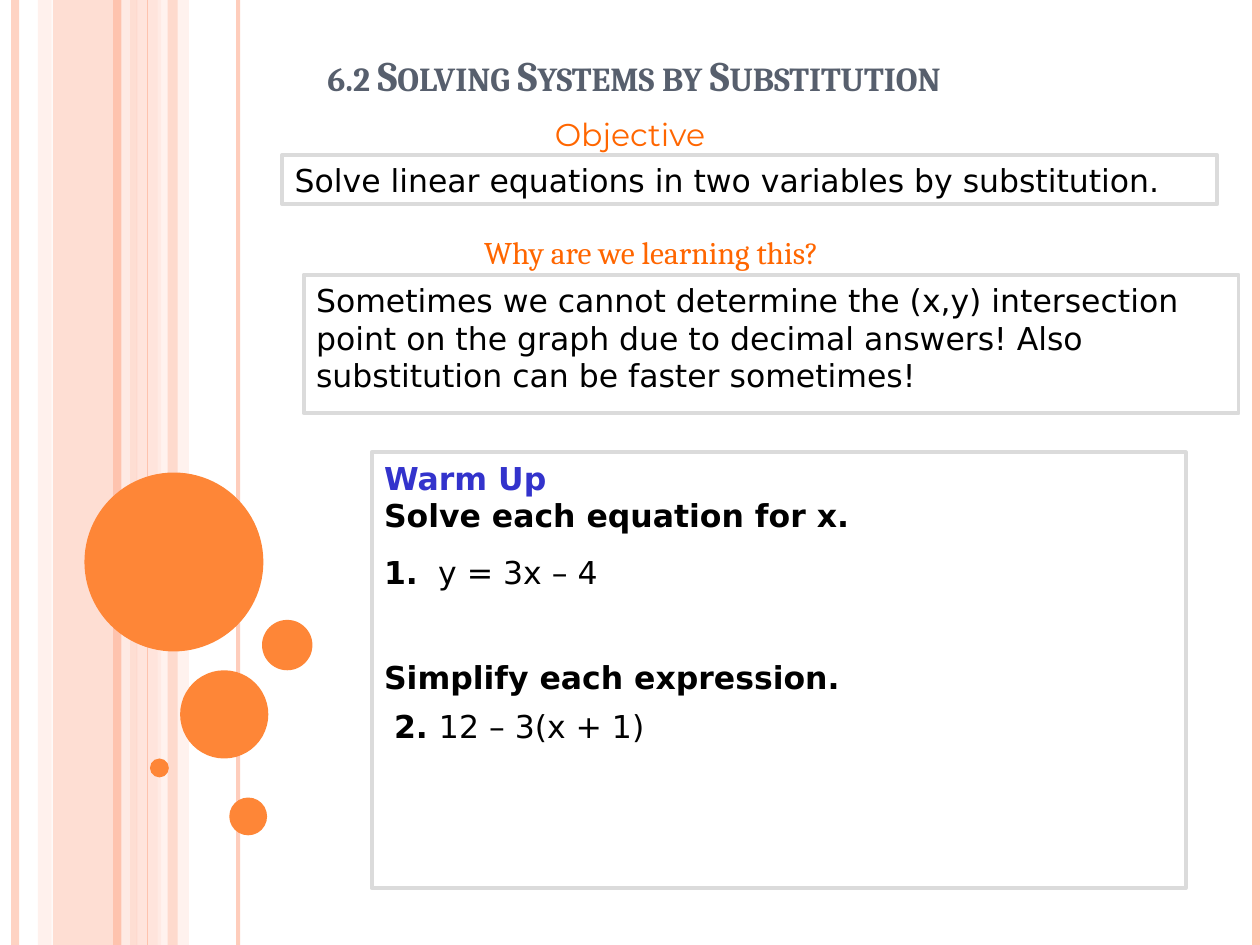
from lxml.etree import SubElement
from pptx import Presentation
from pptx.dml.color import RGBColor
from pptx.enum.shapes import MSO_CONNECTOR, MSO_SHAPE
from pptx.enum.text import MSO_ANCHOR, PP_ALIGN
from pptx.oxml.ns import qn
from pptx.util import Inches, Pt

COLORS = {
    "peach": "FEC3AE", "blush": "FFD9CE", "cream": "FFEDE8",
    "orange": "FE8637", "heading": "FF6600", "title": "575F6D",
    "frame": "DBDBDB", "black": "000000", "blue": "3333CC",
}
BODY_FONT = "DejaVu Sans"


class SlideBuilder:
    def __init__(self, page, height):
        self.page = page
        self.height = height

    def paint(self, color_format, color, opacity=100):
        color_format.rgb = RGBColor.from_string(COLORS[color])
        if opacity < 100:
            element = color_format._xFill.find(qn("a:srgbClr"))
            SubElement(element, qn("a:alpha"), val=str(opacity * 1000))

    def filled(self, kind, left, top, width, height, color, opacity=100):
        shape = self.page.shapes.add_shape(
            kind, Inches(left), Inches(top), Inches(width), Inches(height))
        shape.shadow.inherit = False
        shape.fill.solid()
        element = shape.fill._xPr.find(qn("a:solidFill"))
        shape.fill.fore_color.rgb = RGBColor.from_string(COLORS[color])
        if opacity < 100:
            SubElement(element[0], qn("a:alpha"), val=str(opacity * 1000))
        shape.line.fill.background()

    def band(self, left, width, color, opacity):
        self.filled(MSO_SHAPE.RECTANGLE, left, 0, width, self.height, color, opacity)

    def bubble(self, left, top, size):
        self.filled(MSO_SHAPE.OVAL, left, top, size, size, "orange")

    def stripe(self, x, color, weight, opacity):
        line = self.page.shapes.add_connector(
            MSO_CONNECTOR.STRAIGHT, Inches(x), 0, Inches(x), Inches(self.height))
        line.line.width = Pt(weight)
        line.line.color.rgb = RGBColor.from_string(COLORS[color])
        properties = line._element.spPr
        if opacity < 100:
            element = properties.find(".//" + qn("a:srgbClr"))
            SubElement(element, qn("a:alpha"), val=str(opacity * 1000))
        SubElement(properties, qn("a:effectLst"))

    def style(self, span, color="black", bold=False, font=BODY_FONT, size=18):
        span.font.name = font
        span.font.size = Pt(size)
        span.font.bold = bold
        span.font.color.rgb = RGBColor.from_string(COLORS[color])

    def text(self, left, top, width, height, anchor=MSO_ANCHOR.TOP):
        box = self.page.shapes.add_textbox(
            Inches(left), Inches(top), Inches(width), Inches(height))
        box.text_frame.word_wrap = True
        box.text_frame.vertical_anchor = anchor
        return box

    def framed(self, left, top, width, height):
        box = self.text(left, top, width, height)
        box.line.color.rgb = RGBColor.from_string(COLORS["frame"])
        box.line.width = Pt(2.25)
        return box

    def statement(self, left, top, width, height, wording):
        box = self.framed(left, top, width, height)
        box.text_frame.text = wording
        self.style(box.text_frame.paragraphs[0].runs[0])

    def heading(self, left, top, wording, font):
        box = self.text(left, top, 10, 0.44, MSO_ANCHOR.MIDDLE)
        box.text_frame.text = wording
        para = box.text_frame.paragraphs[0]
        para.alignment = PP_ALIGN.CENTER
        self.style(para.runs[0], "heading", font=font)

    def title(self, left, top, width, height, wording):
        box = self.text(left, top, width, height, MSO_ANCHOR.BOTTOM)
        box.text_frame.text = wording
        span = box.text_frame.paragraphs[0].runs[0]
        self.style(span, "title", True, "Cambria", 24)
        span.font._element.set("cap", "small")

    def question(self, para, number, expression):
        para.text = number
        self.style(para.runs[0], bold=True)
        span = para.add_run()
        span.text = expression
        self.style(span)

    def warm_up(self, left, top, width, height):
        frame = self.framed(left, top, width, height).text_frame
        frame.text = "Warm Up\nSolve each equation for x."
        header, instruction = frame.paragraphs
        self.style(header.runs[0], "blue", True)
        self.style(instruction.runs[0], bold=True)

        first = frame.add_paragraph()
        first.line_spacing = 0.75
        first.space_before = Pt(16)
        self.question(first, "1.\t", "y = 3x – 4")
        indent = Inches(0.43)
        properties = first._p.get_or_add_pPr()
        properties.set("marL", str(indent))
        properties.set("indent", str(-indent))

        simplify = frame.add_paragraph()
        simplify.text = "Simplify each expression."
        simplify.line_spacing = 1.4
        simplify.space_before = Pt(30)
        self.style(simplify.runs[0], bold=True)

        second = self.text(3.03, 5.56, 3.73, 0.4)
        self.question(second.text_frame.paragraphs[0], "2. ", "12 – 3(x + 1)")


def main():
    deck = Presentation()
    deck.slide_width, deck.slide_height = Inches(10), Inches(7.5)
    page = deck.slides.add_slide(deck.slide_layouts[6])
    slide = SlideBuilder(page, 7.5)

    for band in [(0.42, 0.67, "peach", 54), (0.3, 0.11, "blush", 36),
                 (1.08, 0.2, "blush", 70), (1.25, 0.25, "cream", 71)]:
        slide.band(*band)
    for stripe in [(0.12, "peach", 4.5, 73), (1, "cream", 4.5, 83),
                   (0.93, "peach", 4.5, 100), (1.89, "peach", 2.25, 82),
                   (1.17, "peach", 0.75, 100), (9.97, "peach", 4.5, 100)]:
        slide.stripe(*stripe)
    slide.band(1.33, 0.08, "peach", 51)
    for bubble in [(0.67, 3.75, 1.42), (1.43, 5.32, 0.7), (1.19, 6.02, 0.15),
                   (1.82, 6.33, 0.3), (2.08, 4.92, 0.4)]:
        slide.bubble(*bubble)

    slide.title(2.5, 0.29, 6.75, 0.55, "6.2 Solving Systems by Substitution")
    slide.statement(2.24, 1.23, 7.42, 0.39,
                    "Solve linear equations in two variables by substitution.")
    slide.heading(0, 0.84, "Objective", "Montserrat")
    slide.warm_up(2.95, 3.59, 6.46, 3.46)
    slide.statement(2.41, 2.18, 7.42, 1.1,
                    "Sometimes we cannot determine the (x,y) intersection point on "
                    "the graph due to decimal answers! Also substitution can be "
                    "faster sometimes!")
    slide.heading(0.17, 1.78, "Why are we learning this?", "Cambria")
    deck.save("out.pptx")


if __name__ == "__main__":
    main()
